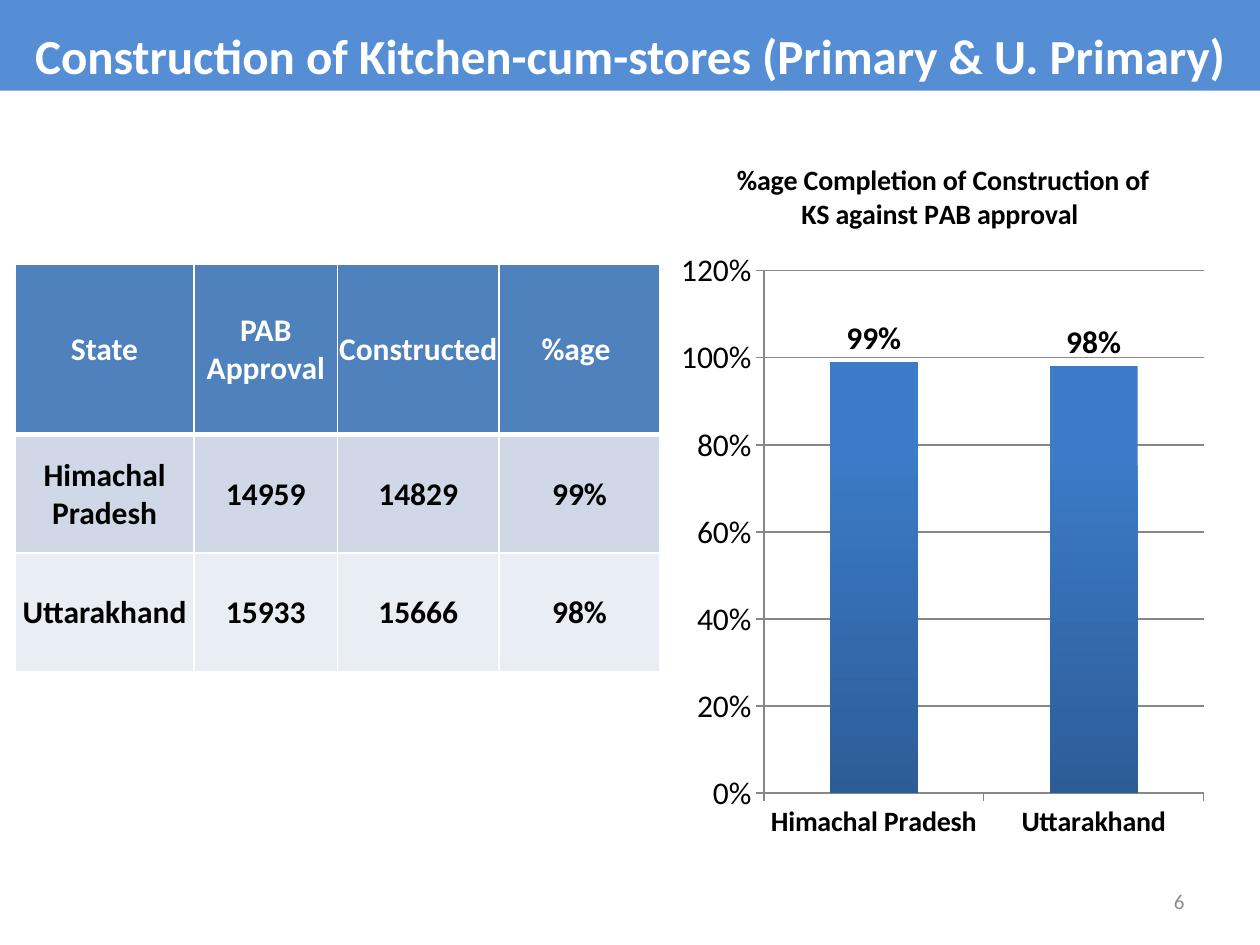
import pptx
import pptx.util
import pptx.chart.data
import pptx.dml.color
import pptx.enum.chart
import pptx.enum.text
import pptx.oxml
import pptx.oxml.ns

Inches, Pt = pptx.util.Inches, pptx.util.Pt
ALIGN = pptx.enum.text.PP_ALIGN
MIDDLE = pptx.enum.text.MSO_ANCHOR.MIDDLE
FONT = "Calibri"
COLORS = {
    "banner": "558ED5", "header": "4F81BD", "band_odd": "D0D8E8",
    "band_even": "E9EDF4", "white": "FFFFFF", "black": "000000",
    "grid": "878787", "number": "8C8C8C", "bar_top": "3C7BC7", "bar_bottom": "2C5D98",
}
TITLE = "Construction of Kitchen-cum-stores (Primary & U. Primary)"
CHART_TITLE = "%age Completion of Construction of KS against PAB approval "
PAGE = "6"
HEADER = ("State", "PAB Approval", "Constructed", "%age ")
STATES = [
    ("Himachal Pradesh", 14959, 14829, 0.99),
    ("Uttarakhand", 15933, 15666, 0.98),
]
COL_WIDTHS = (1.42, 1.14, 1.28, 1.28)
ROW_HEIGHTS = (1.35, 0.94, 0.94)
PLOT = {"x": 0.17, "y": 0.19, "w": 0.81, "h": 0.73}  # fractions of the chart


def rgb(name):
    return pptx.dml.color.RGBColor.from_string(COLORS[name])


def style_font(font, size, color="black", bold=False):
    font.name, font.size, font.bold = FONT, Pt(size), bold
    font.color.rgb = rgb(color)


def write(tf, text, size=18, color="black", bold=False, align=ALIGN.CENTER, spacing=None):
    tf.word_wrap = True
    p = tf.paragraphs[0]
    p.alignment = align
    if spacing:
        p.line_spacing = spacing
    r = p.add_run()
    r.text = text
    style_font(r.font, size, color, bold)


def set_borders(cell, bottom):
    """Give the cell white borders of 1 pt, with its own bottom width."""
    tc_pr = cell._tc.get_or_add_tcPr()
    widths = (("lnL", 1), ("lnR", 1), ("lnT", 1), ("lnB", bottom))
    for i, (tag, width) in enumerate(widths):
        tc_pr.insert(i, pptx.oxml.parse_xml(
            f'<a:{tag} {pptx.oxml.ns.nsdecls("a")} w="{Pt(width)}"><a:solidFill>'
            f'<a:srgbClr val="{COLORS["white"]}"/></a:solidFill></a:{tag}>'))


def add_banner(s):
    sp = s.shapes.title
    sp.left, sp.top, sp.width, sp.height = map(Inches, (0, -0.04, 10, 0.76))
    sp.fill.solid()
    sp.fill.fore_color.rgb = rgb("banner")
    tf = sp.text_frame
    tf.vertical_anchor = MIDDLE
    tf.auto_size = pptx.enum.text.MSO_AUTO_SIZE.NONE
    write(tf, TITLE, size=28, color="white", bold=True, spacing=1.4)


def add_state_table(s):
    rows = [HEADER] + [(n, str(a), str(b), f"{v:.0%}") for n, a, b, v in STATES]
    fills = ("header", "band_odd", "band_even")
    table = s.shapes.add_table(
        len(rows), len(HEADER), Inches(0.12), Inches(2.1),
        Inches(sum(COL_WIDTHS)), Inches(sum(ROW_HEIGHTS))).table
    for col, width in zip(table.columns, COL_WIDTHS):
        col.width = Inches(width)
    for i, row in enumerate(rows):
        table.rows[i].height = Inches(ROW_HEIGHTS[i])
        inset = Inches(0.01 if i else 0)
        for j, text in enumerate(row):
            cell = table.cell(i, j)
            cell.fill.solid()
            cell.fill.fore_color.rgb = rgb(fills[i])
            cell.margin_left = cell.margin_right = cell.margin_top = inset
            cell.margin_bottom = 0
            cell.vertical_anchor = MIDDLE
            write(cell.text_frame, text, color="black" if i else "white", bold=True)
            set_borders(cell, 1 if i else 3)


def set_plot_layout(chart):
    area = chart._chartSpace.chart.plotArea
    for old in area.findall(pptx.oxml.ns.qn("c:layout")):
        area.remove(old)
    parts = "".join(f'<c:{k} val="{v}"/>' for k, v in PLOT.items())
    area.insert(0, pptx.oxml.parse_xml(
        f'<c:layout {pptx.oxml.ns.nsdecls("c")}><c:manualLayout>'
        '<c:layoutTarget val="inner"/><c:xMode val="edge"/><c:yMode val="edge"/>'
        f'{parts}</c:manualLayout></c:layout>'))


def add_completion_chart(s):
    data = pptx.chart.data.CategoryChartData(number_format="0%")
    data.categories = [row[0] for row in STATES]
    data.add_series("Series 1", [row[-1] for row in STATES])
    chart = s.shapes.add_chart(
        pptx.enum.chart.XL_CHART_TYPE.COLUMN_CLUSTERED,
        *map(Inches, (5.33, 1.07, 4.31, 5.68)), data).chart
    style_font(chart.font, 18)
    chart.has_legend = False
    chart.has_title = True
    write(chart.chart_title.text_frame, CHART_TITLE, size=16, bold=True)
    chart.chart_title.include_in_layout = False
    set_plot_layout(chart)

    values, cats = chart.value_axis, chart.category_axis
    values.minimum_scale, values.maximum_scale, values.major_unit = 0, 1.2, 0.2
    values.tick_labels.number_format = "0%"
    values.tick_labels.number_format_is_linked = False
    style_font(values.tick_labels.font, 18)
    style_font(cats.tick_labels.font, 16, bold=True)
    values.has_major_gridlines = True
    for axis in (values, cats):
        axis.major_tick_mark = pptx.enum.chart.XL_TICK_MARK.OUTSIDE
    for line in (values.format.line, cats.format.line, values.major_gridlines.format.line):
        line.color.rgb = rgb("grid")
        line.width = Pt(0.75)

    plot = chart.plots[0]
    plot.gap_width = 150
    plot.vary_by_categories = False
    series = plot.series[0]
    fill = series.format.fill
    fill.gradient()
    fill.gradient_angle = 270
    for stop, name, position in zip(fill.gradient_stops, ("bar_top", "bar_bottom"), (0.2, 1)):
        stop.color.rgb = rgb(name)
        stop.position = position
    labels = series.data_labels
    labels.show_value = True
    labels.number_format = "0%"
    labels.number_format_is_linked = False
    labels.position = pptx.enum.chart.XL_LABEL_POSITION.OUTSIDE_END
    style_font(labels.font, 18, bold=True)


def add_page_number(s):
    tf = s.shapes.add_textbox(*map(Inches, (7.17, 6.95, 2.33, 0.4))).text_frame
    tf.vertical_anchor = MIDDLE
    write(tf, PAGE, size=12, color="number", align=ALIGN.RIGHT)


def main():
    prs = pptx.Presentation()
    prs.slide_width, prs.slide_height = Inches(10), Inches(7.5)
    s = prs.slides.add_slide(prs.slide_layouts.get_by_name("Title Only"))
    add_banner(s)
    add_state_table(s)
    add_completion_chart(s)
    add_page_number(s)
    prs.save("out.pptx")


if __name__ == "__main__":
    main()
